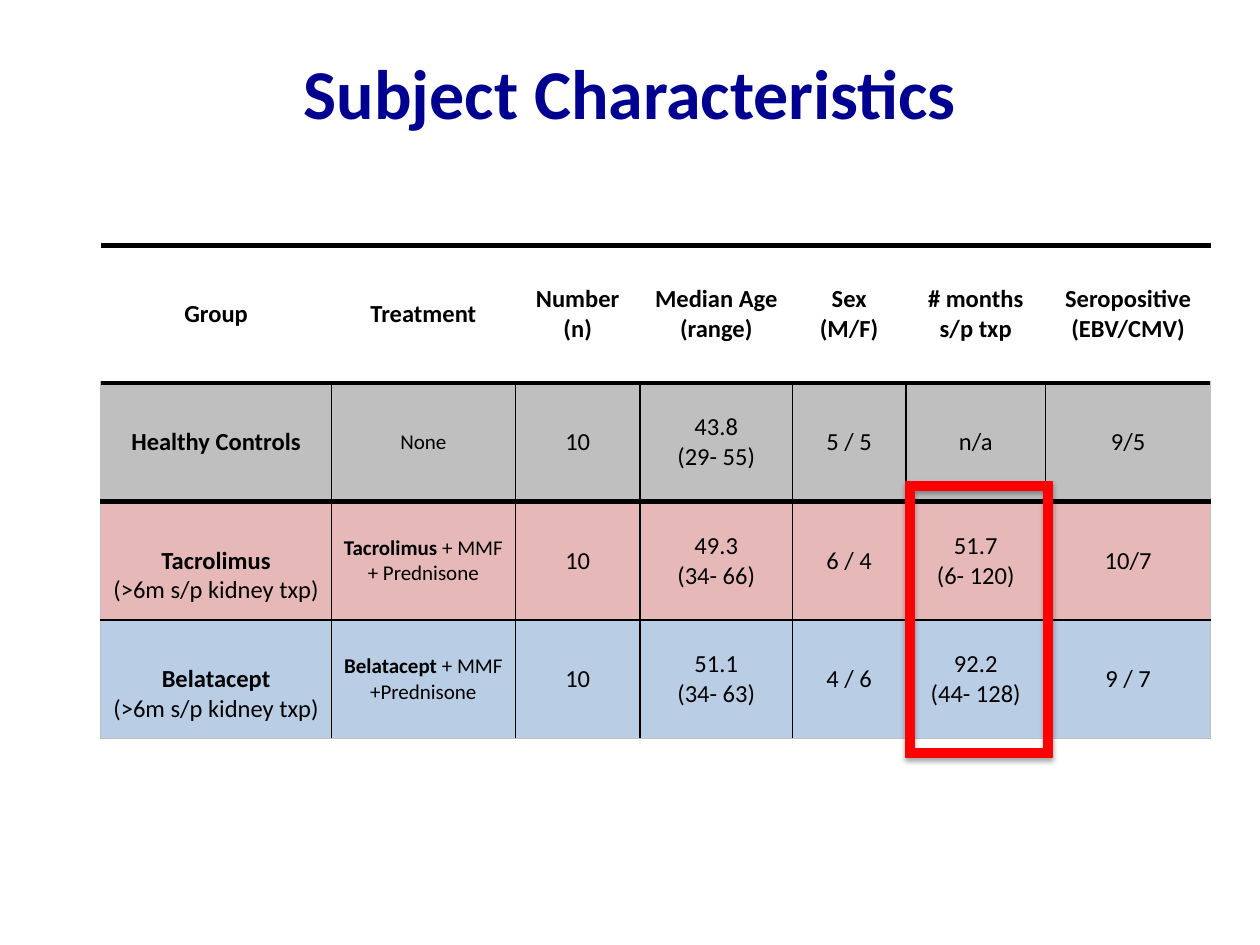
from lxml.etree import SubElement
from pptx import Presentation
from pptx.dml.color import RGBColor
from pptx.enum.shapes import MSO_SHAPE
from pptx.enum.text import MSO_ANCHOR, PP_ALIGN
from pptx.oxml import parse_xml
from pptx.oxml.ns import nsdecls, qn
from pptx.util import Pt

NAVY = RGBColor(0x00, 0x00, 0x90)
BLACK = RGBColor(0x00, 0x00, 0x00)
RED = RGBColor(0xFF, 0x00, 0x00)
GREY = RGBColor(0xBF, 0xBF, 0xBF)
PINK = RGBColor(0xE6, 0xB9, 0xB8)
BLUE = RGBColor(0xB9, 0xCD, 0xE5)
FONT = "Calibri"

# Content: a cell is a list of paragraphs, ** marks bold text
TITLE = "Subject Characteristics"
ROWS = [
    [["**Group"], ["**Treatment"], ["**Number", "**(n)"],
     ["**Median Age", "**(range)"], ["**Sex", "**(M/F)"],
     ["**# months s/p txp"], ["**Seropositive", "**(EBV/CMV)"]],
    [["**Healthy Controls"], ["None"], ["10"], ["43.8", "(29- 55)"],
     ["5 / 5"], ["n/a"], ["9/5"]],
    [["**Tacrolimus", "(>6m s/p kidney txp)"],
     ["**Tacrolimus** + MMF + Prednisone"], ["10"],
     ["49.3", "(34- 66)"], ["6 / 4"], ["51.7", "(6- 120)"], ["10/7"]],
    [["**Belatacept", "(>6m s/p kidney txp)"],
     ["**Belatacept** + MMF +Prednisone"], ["10"],
     ["51.1", "(34- 63)"], ["4 / 6"], ["92.2", "(44- 128)"], ["9 / 7"]],
]
ROW_FILLS = [None, GREY, PINK, BLUE]
COLUMN_WIDTHS = [131.8, 105.1, 71.3, 87.1, 64.8, 79.9, 94.3]
ROW_HEIGHTS = [78.5, 67.7, 67.7, 67.7]

# Horizontal rules from top to bottom: width and colour
THICK, THIN, EDGE = (3, BLACK), (1, BLACK), (0.5, GREY)
RULES = [THICK, THICK, THICK, THIN, EDGE]
TREATMENT_COLUMN = 1
LINE_HEIGHT = 17


def format_font(font, **values):
    color = values.pop("color")
    for name, value in values.items():
        setattr(font, name, value)
    font.color.rgb = color


def set_border(cell, index, side, rule):
    line = parse_xml(f'<a:ln{side} {nsdecls("a")}/>')
    if rule is None:
        line.set("w", "0")
        SubElement(line, qn("a:noFill"))
    else:
        width, color = rule
        line.set("w", str(int(Pt(width))))
        fill = SubElement(line, qn("a:solidFill"))
        SubElement(fill, qn("a:srgbClr")).set("val", str(color))
    cell._tc.get_or_add_tcPr().insert(index, line)


def write_cell(cell, paragraphs, size):
    frame = cell.text_frame
    for number, text in enumerate(paragraphs):
        paragraph = frame.add_paragraph() if number else frame.paragraphs[0]
        paragraph.alignment = PP_ALIGN.CENTER
        for part, words in enumerate(text.split("**")):
            if words:
                run = paragraph.add_run()
                run.text = words
                format_font(run.font, name=FONT, size=Pt(size),
                            bold=part % 2 == 1, color=BLACK)


def add_characteristics_table(slide):
    table = slide.shapes.add_table(
        len(ROWS), len(COLUMN_WIDTHS), Pt(57.6), Pt(140.4),
        Pt(sum(COLUMN_WIDTHS)), Pt(sum(ROW_HEIGHTS))).table
    table.first_row = table.horz_banding = False
    for column, width in zip(table.columns, COLUMN_WIDTHS):
        column.width = Pt(width)
    last = len(COLUMN_WIDTHS) - 1

    for r, (row, fill) in enumerate(zip(ROWS, ROW_FILLS)):
        table.rows[r].height = Pt(ROW_HEIGHTS[r])
        for c, paragraphs in enumerate(row):
            cell = table.cell(r, c)
            # Two-line group names sit one line lower
            lowered = c == 0 and len(paragraphs) > 1
            layout = {"vertical_anchor": MSO_ANCHOR.MIDDLE,
                      "margin_left": Pt(5), "margin_right": Pt(5),
                      "margin_top": Pt(LINE_HEIGHT if lowered else 0),
                      "margin_bottom": Pt(0)}
            for name, value in layout.items():
                setattr(cell, name, value)
            small = r > 0 and c == TREATMENT_COLUMN
            write_cell(cell, paragraphs, 12 if small else 14)

            if fill is None:
                cell.fill.background()
                left = right = None
            else:
                cell.fill.solid()
                cell.fill.fore_color.rgb = fill
                left = EDGE if c == 0 else THIN
                right = EDGE if c == last else THIN
            borders = {"L": left, "R": right, "T": RULES[r], "B": RULES[r + 1]}
            for index, (side, rule) in enumerate(borders.items()):
                set_border(cell, index, side, rule)


def add_highlight_frame(slide):
    frame = slide.shapes.add_shape(
        MSO_SHAPE.FRAME, Pt(517.7), Pt(275), Pt(83.5), Pt(157.7))
    frame.adjustments[0] = 0.06
    frame.fill.solid()
    frame.fill.fore_color.rgb = RED
    frame.line.color.rgb = RED
    frame.line.width = Pt(0.75)
    # Soft shadow straight below
    frame.shadow.inherit = False
    effects = frame._element.spPr.find(qn("a:effectLst"))
    effects.append(parse_xml(
        f'<a:outerShdw {nsdecls("a")} blurRad="{int(Pt(3.1))}" '
        f'dist="{int(Pt(1.8))}" dir="5400000" rotWithShape="0">'
        '<a:srgbClr val="000000"><a:alpha val="35000"/></a:srgbClr>'
        '</a:outerShdw>'))


def main():
    presentation = Presentation()
    presentation.slide_width, presentation.slide_height = Pt(720), Pt(540)
    slide = presentation.slides.add_slide(presentation.slide_layouts[5])

    # Title
    title = slide.shapes.title
    place = {"left": 36, "top": 19.4, "width": 648, "height": 66.2}
    for name, value in place.items():
        setattr(title, name, Pt(value))
    title.text_frame.text = TITLE
    title.text_frame.vertical_anchor = MSO_ANCHOR.MIDDLE
    paragraph = title.text_frame.paragraphs[0]
    paragraph.alignment = PP_ALIGN.CENTER
    format_font(paragraph.runs[0].font, name=FONT, size=Pt(40), bold=True,
                color=NAVY)

    # Table, then the frame around the months column
    add_characteristics_table(slide)
    add_highlight_frame(slide)
    presentation.save("out.pptx")


if __name__ == "__main__":
    main()
